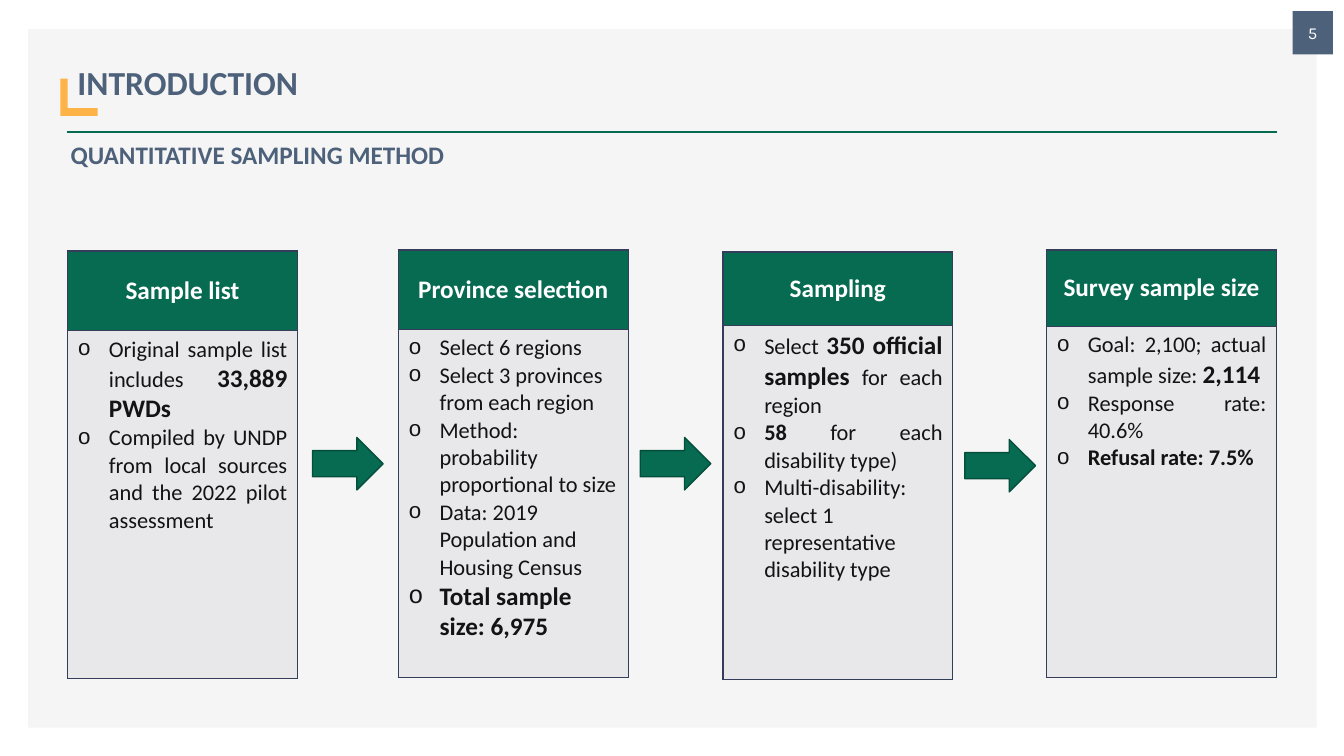
from lxml.etree import SubElement
from pptx import Presentation
from pptx.dml.color import RGBColor
from pptx.enum.shapes import MSO_CONNECTOR, MSO_SHAPE
from pptx.enum.text import MSO_ANCHOR, MSO_AUTO_SIZE, PP_ALIGN
from pptx.oxml import parse_xml
from pptx.oxml.ns import nsdecls, qn
from pptx.util import Inches, Pt

GREEN = RGBColor(0x07, 0x6B, 0x51)
DARK_GREEN = RGBColor(0x05, 0x4E, 0x3B)
SLATE = RGBColor(0x4E, 0x61, 0x7A)
AMBER = RGBColor(0xFD, 0xB3, 0x47)
PANEL_GREY = RGBColor(0xF5, 0xF5, 0xF5)
CELL_GREY = RGBColor(0xE8, 0xE8, 0xEA)
NAVY = RGBColor(0x34, 0x3D, 0x5A)
INK = RGBColor(0x13, 0x13, 0x13)
WHITE = RGBColor(0xFF, 0xFF, 0xFF)

JUSTIFY, LEFT, CENTER = PP_ALIGN.JUSTIFY, PP_ALIGN.LEFT, PP_ALIGN.CENTER
SECTION = "INTRODUCTION"
HEADING = "QUANTITATIVE SAMPLING METHOD"
PAGE = "5"

STEPS = [
    ("Sample list", 0.67, 2.49, 0.79, [
        (JUSTIFY, [("Original sample list includes ", 16, False), ("33,889 PWDs", 18, True)]),
        (JUSTIFY, [("Compiled by UNDP from local sources and the 2022 pilot assessment", 16, False)]),
    ]),
    ("Province selection", 3.95, 2.48, 0.79, [
        (LEFT, [("Select 6 regions", 16, False)]),
        (LEFT, [("Select 3 provinces from each region", 16, False)]),
        (LEFT, [("Method: probability proportional to size", 16, False)]),
        (LEFT, [("Data: 2019 Population and Housing Census", 16, False)]),
        (LEFT, [("Total sample size: 6,975", 18, True)]),
    ]),
    ("Sampling", 7.17, 2.5, 0.73, [
        (JUSTIFY, [("Select ", 16, False), ("350 official samples", 18, True),
                   (" for each region", 16, False)]),
        (JUSTIFY, [("58 ", 16, True), ("for each disability type)", 16, False)]),
        (LEFT, [("Multi-disability: select 1 representative disability type", 16, False)]),
    ]),
    ("Survey sample size", 10.38, 2.48, 0.76, [
        (JUSTIFY, [("Goal: 2,100; actual sample size: ", 16, False), ("2,114", 18, True)]),
        (JUSTIFY, [("Response rate: 40.6%", 16, False)]),
        (JUSTIFY, [("Refusal rate: 7.5%", 16, True)]),
    ]),
]
STEP_WIDTH, STEP_HEIGHT = 2.28, 4.24
ARROWS = [(3.1, 4.34), (6.35, 4.34), (9.57, 4.36)]


def add_block(slide, preset, left, top, width, height, fill, line=None):
    block = slide.shapes.add_shape(preset, Inches(left), Inches(top), Inches(width), Inches(height))
    block.shadow.inherit = False
    block.fill.solid()
    block.fill.fore_color.rgb = fill
    if line is None:
        block.line.fill.background()
    else:
        block.line.color.rgb = line
        block.line.width = Pt(1)
    return block


def format_font(font, size, color, bold=False, name="Calibri"):
    font.name = name
    font.size = Pt(size)
    font.bold = bold
    font.color.rgb = color


def write_line(holder, text, align, anchor, *style):
    frame = holder.text_frame
    frame.text = text
    frame.word_wrap = True
    frame.vertical_anchor = anchor
    paragraph = frame.paragraphs[0]
    paragraph.alignment = align
    format_font(paragraph.runs[0].font, *style)
    return paragraph


def add_bullet(paragraph):
    properties = paragraph._p.get_or_add_pPr()
    properties.set("marL", str(Inches(0.31)))
    properties.set("indent", str(-Inches(0.31)))
    color = SubElement(properties, qn("a:buClr"))
    SubElement(color, qn("a:srgbClr")).set("val", str(INK))
    SubElement(properties, qn("a:buFont")).set("typeface", "Courier New")
    SubElement(properties, qn("a:buChar")).set("char", "o")


def style_cell(cell, fill):
    cell.fill.solid()
    cell.fill.fore_color.rgb = fill
    for order, side in enumerate(("lnL", "lnR", "lnT", "lnB")):
        border = parse_xml(
            f'<a:{side} {nsdecls("a")} w="{Pt(1)}"><a:solidFill>'
            f'<a:srgbClr val="{NAVY}"/></a:solidFill></a:{side}>')
        cell._tc.get_or_add_tcPr().insert(order, border)


def add_step(slide, name, left, top, header_height, points):
    table = slide.shapes.add_table(
        2, 1, Inches(left), Inches(top), Inches(STEP_WIDTH), Inches(STEP_HEIGHT)).table
    table.first_row = table.horz_banding = False
    table.rows[0].height = Inches(header_height)
    table.rows[1].height = Inches(STEP_HEIGHT - header_height)
    header, body = table.cell(0, 0), table.cell(1, 0)
    style_cell(header, GREEN)
    style_cell(body, CELL_GREY)
    header.vertical_anchor = MSO_ANCHOR.MIDDLE
    title = header.text_frame.paragraphs[0]
    title.text = name
    title.alignment = CENTER
    format_font(title.runs[0].font, 18, WHITE, True)
    for index, (align, pieces) in enumerate(points):
        frame = body.text_frame
        paragraph = frame.add_paragraph() if index else frame.paragraphs[0]
        paragraph.alignment = align
        add_bullet(paragraph)
        for text, size, bold in pieces:
            run = paragraph.add_run()
            run.text = text
            format_font(run.font, size, INK, bold)


def main():
    deck = Presentation()
    deck.slide_width, deck.slide_height = Inches(13.33), Inches(7.5)
    slide = deck.slides.add_slide(deck.slide_layouts[5])

    add_block(slide, MSO_SHAPE.RECTANGLE, 0.28, 0.29, 12.78, 6.93, PANEL_GREY)
    rule = slide.shapes.add_connector(
        MSO_CONNECTOR.STRAIGHT, Inches(0.66), Inches(1.31), Inches(12.67), Inches(1.31))
    rule.line.color.rgb = GREEN
    rule.line.width = Pt(2)
    SubElement(rule._element.spPr, qn("a:effectLst"))

    page_tab = add_block(slide, MSO_SHAPE.RECTANGLE, 12.82, 0.11, 0.4, 0.43, SLATE)
    write_line(page_tab, PAGE, CENTER, MSO_ANCHOR.MIDDLE, 12, WHITE, False, "Karla")
    add_block(slide, MSO_SHAPE.RECTANGLE, 0.6, 0.78, 0.37, 0.37, AMBER)
    section = add_block(slide, MSO_SHAPE.RECTANGLE, 0.67, 0.36, 9, 0.71, PANEL_GREY)
    write_line(section, SECTION, LEFT, MSO_ANCHOR.MIDDLE, 24, SLATE, True).line_spacing = 1.5

    heading = slide.shapes.title
    heading.left, heading.top = Inches(0.6), Inches(1.33)
    heading.width, heading.height = Inches(9.08), Inches(0.4)
    write_line(heading, HEADING, JUSTIFY, MSO_ANCHOR.TOP, 18, SLATE, True)
    heading.text_frame.auto_size = MSO_AUTO_SIZE.SHAPE_TO_FIT_TEXT
    section._element.addnext(heading._element)

    for step in STEPS:
        add_step(slide, *step)
    for left, top in ARROWS:
        add_block(slide, MSO_SHAPE.RIGHT_ARROW, left, top, 0.7, 0.52, GREEN, DARK_GREEN)

    deck.save("out.pptx")


if __name__ == "__main__":
    main()
